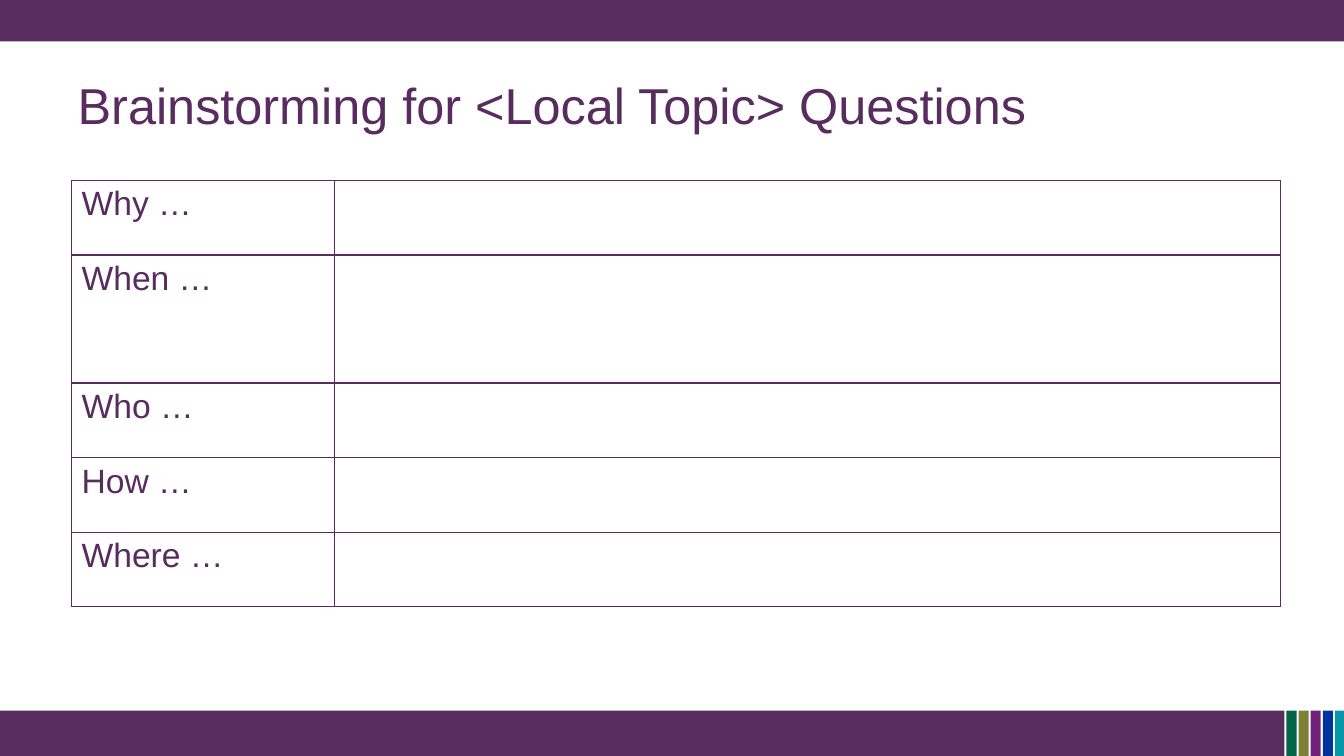
from lxml.etree import SubElement
from pptx import Presentation
from pptx.dml.color import RGBColor
from pptx.enum.shapes import MSO_SHAPE
from pptx.enum.text import MSO_ANCHOR, PP_ALIGN
from pptx.oxml.ns import qn
from pptx.util import Pt

PX = 9144
PURPLE = "592C5F"
STRIPES = ["006647", "7E8034", "712177", "0033A0", "0996A9"]
QUESTIONS = ["Why …", "When …", "Who …", "How …", "Where …"]
ROW_HEIGHTS = [74, 127, 74, 74, 74]
COL_WIDTHS = [261, 938]


def px(*lengths):
    """Turn pixel lengths into EMU."""
    return [n * PX for n in lengths]


def paint(color_owner, color):
    """Fill a shape or colour a font from a hex string."""
    color_owner.rgb = RGBColor.from_string(color)


def style(p, size):
    """Format a paragraph in the slide's font and colour."""
    p.font.name = "Arial"
    p.font.size = Pt(size)
    paint(p.font.color, PURPLE)


def add_bar(s, box, color):
    """Draw a plain coloured rectangle."""
    sp = s.shapes.add_shape(MSO_SHAPE.RECTANGLE, *px(*box))
    sp.shadow.inherit = False
    sp.fill.solid()
    paint(sp.fill.fore_color, color)
    sp.line.fill.background()


def add_footer(s, left, top, width, height):
    """Draw the bottom band and its row of stripes at the right."""
    band, gap, stripe = width - 59, 2, 10
    add_bar(s, (left, top, band, height), PURPLE)
    for i, color in enumerate(STRIPES):
        x = left + band + gap + i * (stripe + gap)
        add_bar(s, (x, top, stripe, height), color)


def add_title(s, left, top, width, height, text):
    """Place the slide title."""
    sp = s.shapes.title
    sp.left, sp.top, sp.width, sp.height = px(left, top, width, height)
    tf = sp.text_frame
    tf.text = text
    tf.vertical_anchor = MSO_ANCHOR.MIDDLE
    p = tf.paragraphs[0]
    p.alignment = PP_ALIGN.LEFT
    style(p, 36)


def add_borders(cell):
    """Outline a table cell on all four sides."""
    tcPr = cell._tc.get_or_add_tcPr()
    for side in ("a:lnL", "a:lnR", "a:lnT", "a:lnB"):
        ln = SubElement(tcPr, qn(side), w=str(Pt(1)))
        fill = SubElement(ln, qn("a:solidFill"))
        SubElement(fill, qn("a:srgbClr"), val=PURPLE)


def add_question_table(s, left, top):
    """Draw the question grid with an empty answer column."""
    size = sum(COL_WIDTHS), sum(ROW_HEIGHTS)
    table = s.shapes.add_table(len(QUESTIONS), len(COL_WIDTHS),
                               *px(left, top, *size)).table
    table.first_row = table.horz_banding = False
    for col, width in zip(table.columns, px(*COL_WIDTHS)):
        col.width = width
    for row, height, question in zip(table.rows, px(*ROW_HEIGHTS), QUESTIONS):
        row.height = height
        row.cells[0].text = question
        for cell in row.cells:
            add_borders(cell)
            cell.fill.background()
            style(cell.text_frame.paragraphs[0], 24)


def main():
    """Build and save the slide."""
    prs = Presentation()
    prs.slide_width, prs.slide_height = px(1333, 750)
    s = prs.slides.add_slide(prs.slide_layouts[5])
    add_footer(s, 0, 705, 1333, 45)
    add_bar(s, (0, 0, 1333, 41), PURPLE)
    add_title(s, 67, 41, 1200, 125, "Brainstorming for <Local Topic> Questions")
    add_question_table(s, 71, 179)
    prs.save("out.pptx")


if __name__ == "__main__":
    main()
